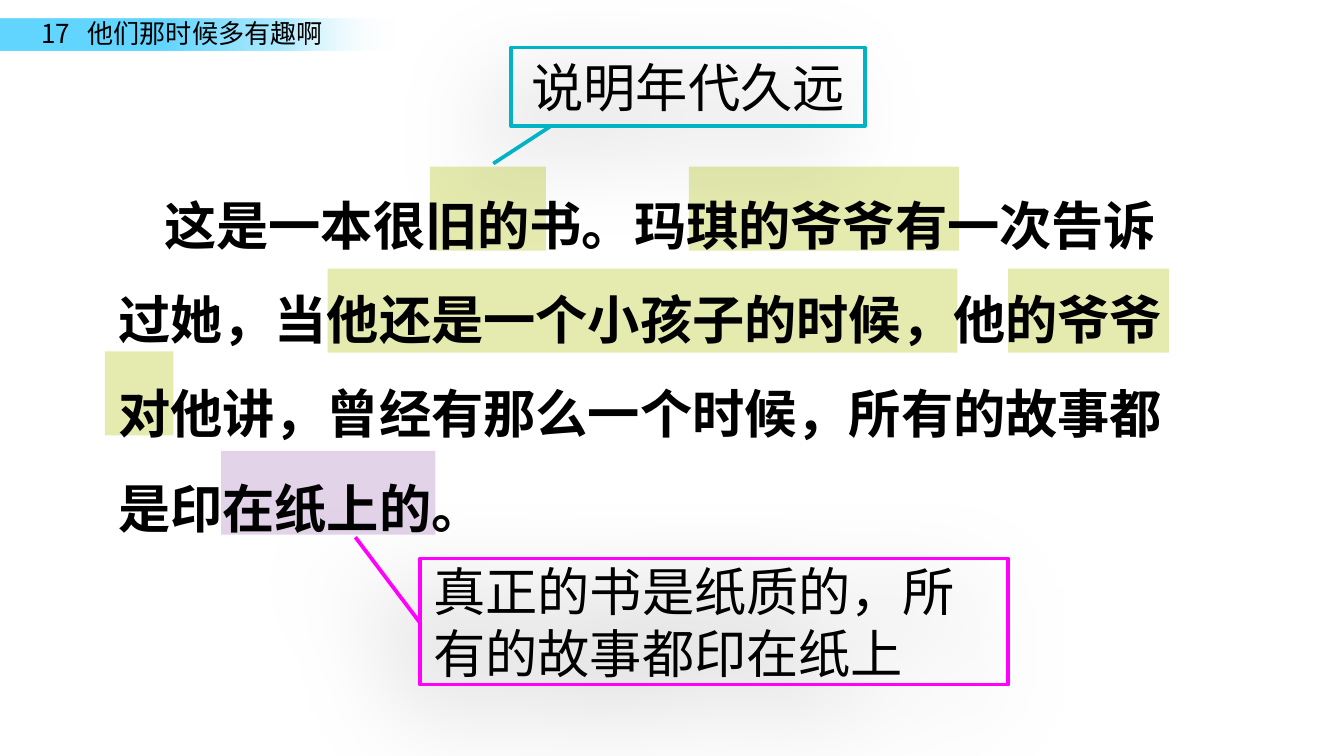
from lxml import etree
from pptx import Presentation
from pptx import util as u
from pptx.dml.color import RGBColor
from pptx.enum import shapes, text
from pptx.oxml.ns import qn

PX = 9525  # EMU per px, 96 px to the inch
FONT = "Noto Sans CJK SC"
BLACK = RGBColor(0, 0, 0)
GREEN = RGBColor(0xE5, 0xEB, 0xAF)
PURPLE = RGBColor(0xE3, 0xD3, 0xE9)
TEAL = RGBColor(0x02, 0xB3, 0xC5)
MAGENTA = RGBColor(0xFF, 0x00, 0xFF)
BAR_STOPS = [(40, "63D6FF", 100), (70, "97E4FF", 76), (97, "FFFFFF", 0)]


def add_color(parent, color, opacity):
    """Append an RGB colour with its opacity in percent."""
    rgb = etree.SubElement(parent, qn("a:srgbClr"), val=color)
    etree.SubElement(rgb, qn("a:alpha"), val=str(opacity * 1000))


def write(box, words, size, bold=False):
    """Put one styled paragraph in a box and return it."""
    frame = box.text_frame
    frame.word_wrap = True
    frame.text = words
    para = frame.paragraphs[0]
    para.alignment = text.PP_ALIGN.LEFT
    for span in para.runs:
        span.font.size = u.Pt(size)
        span.font.bold = bold
        span.font.name = FONT
        span.font.color.rgb = BLACK
        latin = span.font._element.find(qn("a:latin"))
        latin.addnext(etree.Element(qn("a:ea"), typeface=FONT))
    return para


deck = Presentation()
deck.slide_width, deck.slide_height = 960 * PX, 540 * PX
page = deck.slides.add_slide(deck.slide_layouts[6])

# Title bar fading out to the right
bar = page.shapes.add_shape(shapes.MSO_SHAPE.RECTANGLE, 0, 13 * PX, 291 * PX, 23 * PX)
bar.shadow.inherit = False
bar.line.fill.background()
bar.fill.gradient()
bar.fill.gradient_angle = 0
stops = bar._element.spPr.find(qn("a:gradFill")).find(qn("a:gsLst"))
for stop in list(stops):
    stops.remove(stop)
for position, color, opacity in BAR_STOPS:
    stop = etree.SubElement(stops, qn("a:gs"), pos=str(position * 1000))
    add_color(stop, color, opacity)

title = page.shapes.add_textbox(20 * PX, 8 * PX, 227 * PX, 33 * PX)
para = write(title, "17\t他们那时候多有趣啊", 14)
tabs = etree.Element(qn("a:tabLst"))
etree.SubElement(tabs, qn("a:tab"), pos=str(33 * PX), algn="l")
para._p.get_or_add_pPr().append(tabs)

# Highlights behind the passage
for left, top, width, color in [
    (158, 322, 153, PURPLE),
    (75, 251, 49, GREEN),
    (720, 192, 115, GREEN),
    (234, 192, 450, GREEN),
    (492, 119, 193, GREEN),
    (307, 119, 83, GREEN),
]:
    mark = page.shapes.add_shape(
        shapes.MSO_SHAPE.RECTANGLE, left * PX, top * PX, width * PX, 60 * PX)
    mark.shadow.inherit = False
    mark.fill.solid()
    mark.fill.fore_color.rgb = color
    mark.line.fill.background()

passage = page.shapes.add_textbox(75 * PX, 111 * PX, 787 * PX, 271 * PX)
para = write(
    passage,
    "这是一本很旧的书。玛琪的爷爷有一次告诉过她，当他还是一个小孩子的时候，"
    "他的爷爷对他讲，曾经有那么一个时候，所有的故事都是印在纸上的。",
    28, bold=True)
para.line_spacing = 1.5
para._p.get_or_add_pPr().set("indent", str(33 * PX))

# Callouts: pointer given as y, x of its tip and y, x of its root
for left, top, width, height, pointer, color, align, words in [
    (365, 34, 253, 56, (1.48, -0.05, 1.01, 0.11), TEAL,
     text.PP_ALIGN.CENTER, "说明年代久远"),
    (300, 399, 420, 90, (0.51, 0, -0.17, -0.11), MAGENTA,
     text.PP_ALIGN.LEFT, "真正的书是纸质的，所有的故事都印在纸上"),
]:
    callout = page.shapes.add_shape(
        shapes.MSO_SHAPE.LINE_CALLOUT_1, left * PX, top * PX, width * PX, height * PX)
    for index, value in enumerate(pointer):
        callout.adjustments[index] = value
    callout.fill.background()
    callout.line.color.rgb = color
    callout.line.width = u.Pt(2)
    callout.shadow.inherit = False
    effects = callout._element.spPr.find(qn("a:effectLst"))
    shadow = etree.SubElement(
        effects, qn("a:outerShdw"), blurRad=str(u.Pt(50)), dist=str(u.Pt(20)),
        dir=str(135 * 60000), algn="tr", rotWithShape="0")
    add_color(shadow, "000000", 35)
    callout.text_frame.vertical_anchor = text.MSO_ANCHOR.MIDDLE
    write(callout, words, 28).alignment = align

deck.save("out.pptx")
